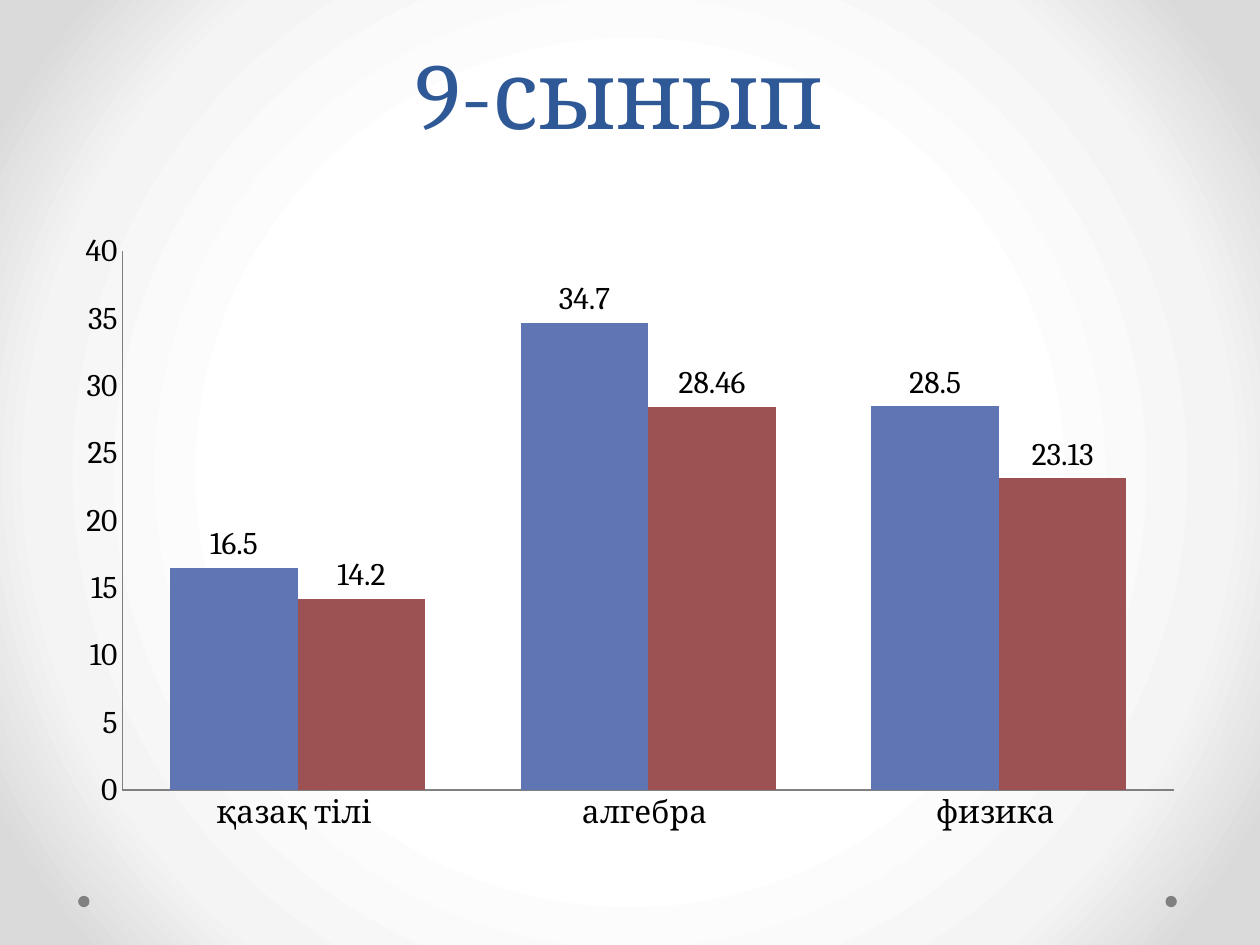
from lxml.etree import SubElement
from pptx import Presentation
from pptx.chart.data import CategoryChartData
from pptx.dml.color import RGBColor
from pptx.enum.chart import XL_CHART_TYPE, XL_LABEL_POSITION, XL_TICK_MARK
from pptx.enum.shapes import MSO_SHAPE
from pptx.enum.text import MSO_ANCHOR, PP_ALIGN
from pptx.oxml.ns import qn
from pptx.util import Inches, Pt

# Content
TITLE = "9-сынып "
SUBJECTS = ["қазақ тілі ", "алгебра ", "физика "]
SERIES = [
    ("Series 1", [16.5, 34.7, 28.5], "6076B4"),
    ("Series 2", [14.2, 28.46, 23.13], "9C5252"),
]
DOT_LEFTS = [0.62, 9.25]
THEME = {
    "font": "Cambria",
    "title": "2F5897", "title_size": 54, "title_line": 58,
    "text": "000000", "chart_size": 18,
    "muted": "808080",
    "background": [(50, "FFFFFF"), (76, "F4F4F4"), (92, "DADADA")],
}


def rgb(name):
    return RGBColor.from_string(THEME[name])


def set_radial_background(slide):
    slide.background.fill.gradient()
    grad = next(slide.element.iter(qn("a:gradFill")))
    for child in list(grad):
        grad.remove(child)
    stops = SubElement(grad, qn("a:gsLst"))
    for position, color in THEME["background"]:
        stop = SubElement(stops, qn("a:gs"), pos=str(position * 1000))
        SubElement(stop, qn("a:srgbClr"), val=color)
    circle = SubElement(grad, qn("a:path"), {"path": "circle"})
    SubElement(circle, qn("a:fillToRect"),
               {side: "50000" for side in "ltrb"})


def add_dot(slide, left):
    sp = slide.shapes.add_shape(MSO_SHAPE.OVAL, Inches(left), Inches(7.11),
                                Inches(0.09), Inches(0.09))
    sp.shadow.inherit = False
    sp.fill.solid()
    sp.fill.fore_color.rgb = rgb("muted")
    sp.line.fill.background()


def add_title(slide):
    sp = slide.shapes.add_textbox(Inches(0.5), Inches(0), Inches(9), Inches(1.23))
    tf = sp.text_frame
    tf.word_wrap = True
    tf.vertical_anchor = MSO_ANCHOR.BOTTOM
    p = tf.paragraphs[0]
    p.alignment = PP_ALIGN.CENTER
    p.line_spacing = Pt(THEME["title_line"])
    r = p.add_run()
    r.text = TITLE
    r.font.name = THEME["font"]
    r.font.size = Pt(THEME["title_size"])
    r.font.color.rgb = rgb("title")


def add_score_chart(slide):
    data = CategoryChartData()
    data.categories = SUBJECTS
    for name, values, _ in SERIES:
        data.add_series(name, values)
    chart = slide.shapes.add_chart(
        XL_CHART_TYPE.COLUMN_CLUSTERED,
        Inches(0.5), Inches(1.75), Inches(9), Inches(4.95), data).chart
    chart.has_legend = False
    chart.has_title = False
    chart.font.name = THEME["font"]
    chart.font.size = Pt(THEME["chart_size"])
    chart.font.color.rgb = rgb("text")

    # Axes
    for axis in (chart.category_axis, chart.value_axis):
        axis.has_major_gridlines = False
        axis.major_tick_mark = XL_TICK_MARK.NONE
        axis.minor_tick_mark = XL_TICK_MARK.NONE
        axis.format.line.color.rgb = rgb("muted")
        axis.format.line.width = Pt(0.75)
    chart.value_axis.minimum_scale = 0
    chart.value_axis.maximum_scale = 40
    chart.value_axis.major_unit = 5

    # Columns and value labels
    plot = chart.plots[0]
    plot.gap_width = 75
    plot.overlap = 0
    plot.vary_by_categories = False
    for series, (_, _, color) in zip(plot.series, SERIES):
        series.invert_if_negative = False
        series.format.fill.solid()
        series.format.fill.fore_color.rgb = RGBColor.from_string(color)
        series.data_labels.show_value = True
        series.data_labels.position = XL_LABEL_POSITION.OUTSIDE_END


def main():
    prs = Presentation()
    prs.slide_width, prs.slide_height = Inches(10), Inches(7.5)
    slide = prs.slides.add_slide(prs.slide_layouts[6])
    set_radial_background(slide)
    for left in DOT_LEFTS:
        add_dot(slide, left)
    add_title(slide)
    add_score_chart(slide)
    prs.save("out.pptx")


if __name__ == "__main__":
    main()
